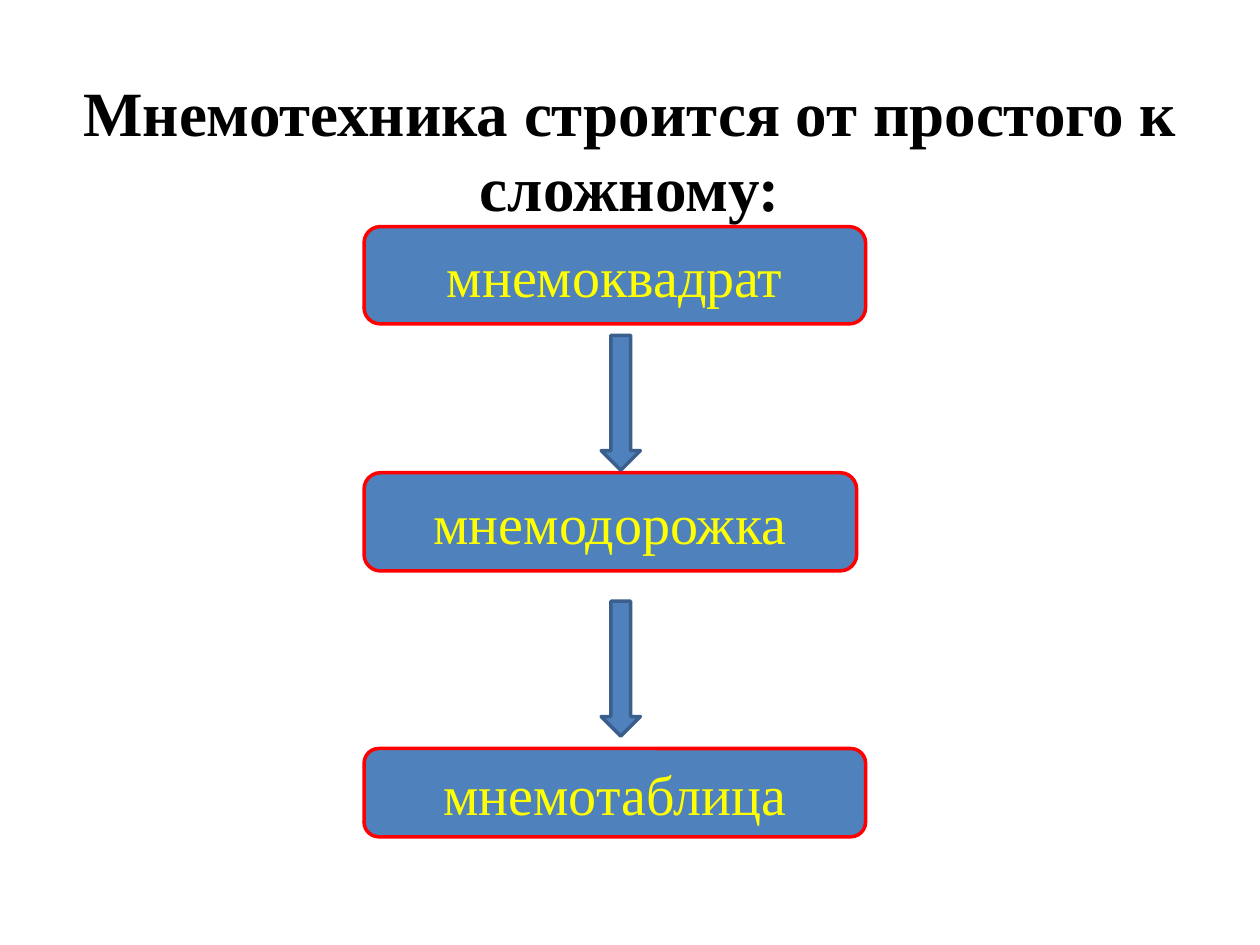
from pptx import Presentation
from pptx.dml.color import RGBColor
from pptx.enum.shapes import MSO_SHAPE
from pptx.enum.text import MSO_ANCHOR, MSO_AUTO_SIZE, PP_ALIGN
from pptx.util import Cm, Pt

ROUND = MSO_SHAPE.ROUNDED_RECTANGLE
DOWN = MSO_SHAPE.DOWN_ARROW
MIDDLE = MSO_ANCHOR.MIDDLE
CENTER = PP_ALIGN.CENTER
FIXED = MSO_AUTO_SIZE.NONE

BLACK = RGBColor(0x00, 0x00, 0x00)
BLUE = RGBColor(0x4F, 0x81, 0xBD)
NAVY = RGBColor(0x3A, 0x5F, 0x8C)
RED = RGBColor(0xFF, 0x00, 0x00)
YELLOW = RGBColor(0xFF, 0xFF, 0x00)

FACE = "Times New Roman"
HEAD = {"name": FACE, "size": Pt(36), "bold": True}
LABEL = {"name": FACE, "size": Pt(32), "bold": False}

STEPS = [
    ("мнемоквадрат", 0, 10.11, 1.96),
    ("мнемодорожка", 4.96, 9.93, 1.98),
    ("мнемотаблица", 10.52, 10.11, 1.78),
]
ARROWS = [2.19, 7.55]


def write(frame, text, style, color):
    frame.text = text
    frame.word_wrap = True
    frame.auto_size = FIXED
    frame.vertical_anchor = MIDDLE
    para = frame.paragraphs[0]
    para.alignment = CENTER
    font = para.runs[0].font
    for key, value in style.items():
        setattr(font, key, value)
    font.color.rgb = color


def draw(slide, kind, box, edge):
    shape = slide.shapes.add_shape(kind, *map(Cm, box))
    shape.shadow.inherit = False
    shape.fill.solid()
    shape.fill.fore_color.rgb = BLUE
    shape.line.color.rgb = edge
    shape.line.width = Pt(2)
    return shape


def add_title(slide, box):
    title = slide.shapes.title
    title.left, title.top, title.width, title.height = map(Cm, box)
    write(title.text_frame, "Мнемотехника строится от простого к сложному:", HEAD, BLACK)
    title.text_frame.margin_bottom = Cm(1.45)


def add_flow(slide, left, top):
    for text, drop, width, height in STEPS:
        step = draw(slide, ROUND, (left, top + drop, width, height), RED)
        write(step.text_frame, text, LABEL, YELLOW)
    for drop in ARROWS:
        draw(slide, DOWN, (left + 4.78, top + drop, 0.79, 2.72), NAVY)


def main():
    deck = Presentation()
    deck.slide_width, deck.slide_height = Cm(25.4), Cm(19.05)
    slide = deck.slides.add_slide(deck.slide_layouts[5])
    add_title(slide, (1.27, 1.78, 22.86, 3.76))
    add_flow(slide, 7.34, 4.57)
    deck.save("out.pptx")


if __name__ == "__main__":
    main()
